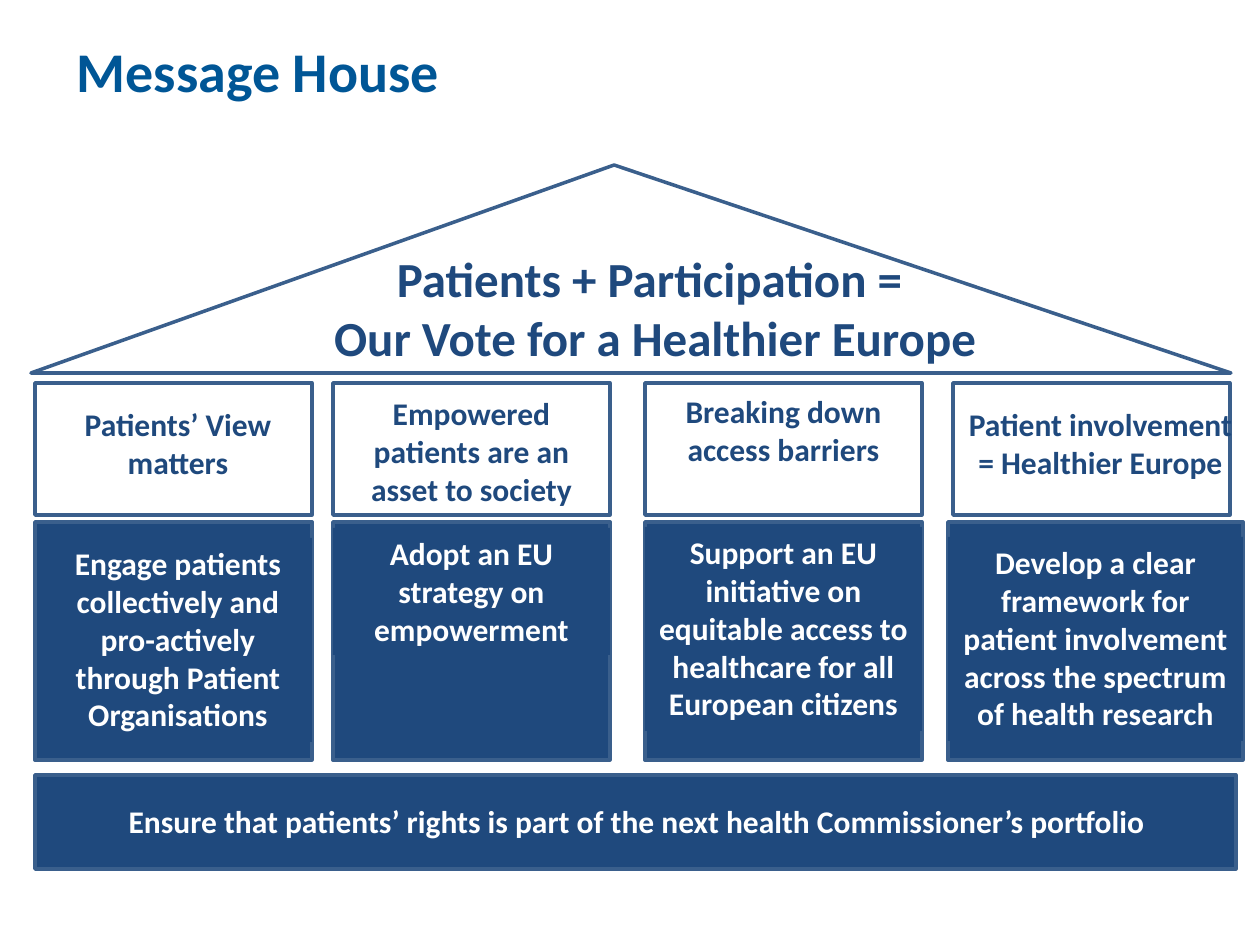
import dataclasses
import pptx
import pptx.dml.color
import pptx.enum.shapes
import pptx.enum.text
import pptx.util

PX = pptx.util.Inches(1) // 126
SHAPES = pptx.enum.shapes.MSO_SHAPE
ALIGN = pptx.enum.text.PP_ALIGN
ANCHOR = pptx.enum.text.MSO_ANCHOR


def rgb(value):
    return pptx.dml.color.RGBColor.from_string(value)


@dataclasses.dataclass(frozen=True)
class Theme:
    font: str = "Calibri"
    title_color: object = rgb("005696")
    navy: object = rgb("1F497D")
    outline: object = rgb("3A5F8C")
    white: object = rgb("FFFFFF")
    title_size: int = 32
    roof_size: int = 28
    body_size: int = 18
    line_width: int = 2


THEME = Theme()


@dataclasses.dataclass(frozen=True)
class Box:
    left: int
    top: int
    width: int
    height: int

    def inner(self, dx, dy, width, height):
        return Box(self.left + dx, self.top + dy, width, height)

    def emu(self):
        return [round(length * PX) for length in dataclasses.astuple(self)]


def add_panel(slide, box, fill, preset=SHAPES.RECTANGLE):
    panel = slide.shapes.add_shape(preset, *box.emu())
    panel.shadow.inherit = False
    panel.fill.solid()
    panel.fill.fore_color.rgb = fill
    panel.line.color.rgb = THEME.outline
    panel.line.width = pptx.util.Pt(THEME.line_width)
    return panel


def write(frame, lines, size, color, align):
    frame.word_wrap = True
    frame.text = "\n".join(lines)
    for paragraph in frame.paragraphs:
        paragraph.alignment = align
        paragraph.font.name = THEME.font
        paragraph.font.size = pptx.util.Pt(size)
        paragraph.font.bold = True
        paragraph.font.color.rgb = color


def add_label(slide, box, lines, color, size=THEME.body_size, fill=None):
    label = slide.shapes.add_textbox(*box.emu())
    if fill is not None:
        label.fill.solid()
        label.fill.fore_color.rgb = fill
    write(label.text_frame, lines, size, color, ALIGN.CENTER)


def add_title(slide, box):
    title = slide.shapes.title
    title.left, title.top, title.width, title.height = box.emu()
    write(title.text_frame, ["Message House"], THEME.title_size,
          THEME.title_color, ALIGN.LEFT)
    title.text_frame.vertical_anchor = ANCHOR.MIDDLE


def add_roof(slide, box):
    roof = add_panel(slide, box, THEME.white, SHAPES.ISOSCELES_TRIANGLE)
    roof.adjustments[0] = 0.486
    lines = ["Patients + Participation = ", "Our Vote for a Healthier Europe"]
    add_label(slide, box.inner(271, 77, 706, 131), lines,
              THEME.navy, THEME.roof_size)


def add_message(slide, box, label_box, text):
    add_panel(slide, box, THEME.white)
    add_label(slide, box.inner(*label_box), [text], THEME.navy)


def add_action(slide, box, label_box, text):
    add_panel(slide, box, THEME.navy)
    add_label(slide, box.inner(*label_box), [text], THEME.white,
              fill=THEME.navy)


def main():
    deck = pptx.Presentation()
    deck.slide_width, deck.slide_height = 1260 * PX, 945 * PX
    slide = deck.slides.add_slide(deck.slide_layouts[5])

    add_title(slide, Box(64, 26, 953, 89))
    add_roof(slide, Box(31, 165, 1200, 208))

    messages = [
        (35, (9, 16, 268, 89), "Patients’ View matters"),
        (333, (0, 5, 277, 127), "Empowered patients are an asset to society"),
        (645, (0, 3, 277, 89), "Breaking down access barriers"),
        (953, (0, 16, 295, 89), "Patient involvement = Healthier Europe"),
    ]
    for left, label_box, text in messages:
        add_message(slide, Box(left, 383, 277, 132), label_box, text)

    actions = [
        (35, 277, (9, 16, 268, 204),
         "Engage patients collectively and pro-actively through Patient Organisations"),
        (333, 277, (0, 6, 277, 127), "Adopt an EU strategy on empowerment"),
        (645, 277, (0, 5, 277, 204),
         "Support an EU initiative on equitable access to healthcare for all European citizens"),
        (948, 295, (0, 15, 295, 204),
         "Develop a clear framework for patient involvement across the spectrum of health research"),
    ]
    for left, width, label_box, text in actions:
        add_action(slide, Box(left, 522, width, 238), label_box, text)

    add_action(slide, Box(35, 775, 1201, 94), (42, 21, 1120, 50),
               "Ensure that patients’ rights is part of the next health Commissioner’s portfolio")
    deck.save("out.pptx")


if __name__ == "__main__":
    main()
